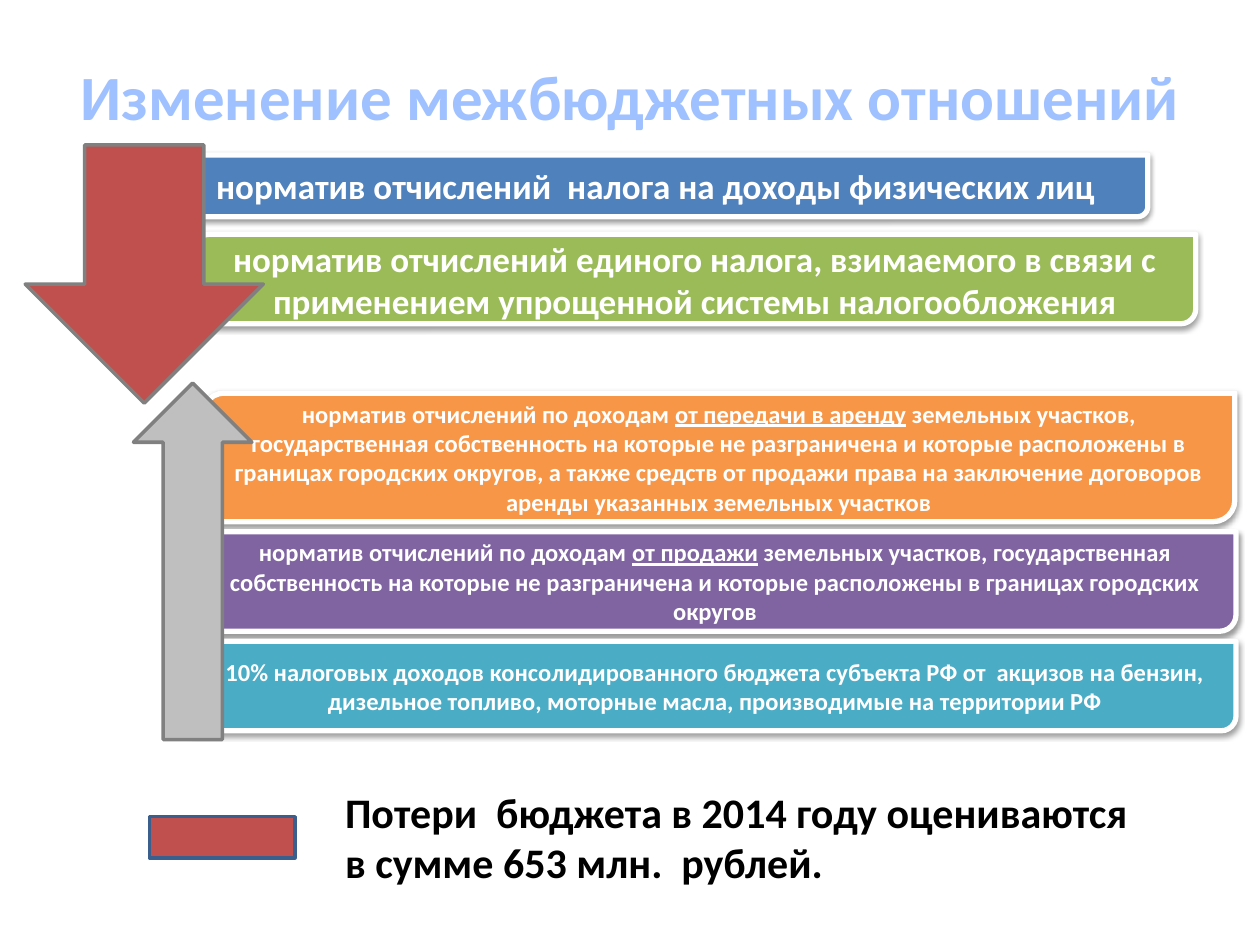
from lxml import etree
from pptx import Presentation
from pptx.dml.color import RGBColor
from pptx.enum.shapes import MSO_SHAPE
from pptx.enum.text import MSO_ANCHOR, PP_ALIGN
from pptx.oxml.ns import qn
from pptx.util import Inches, Pt

BAR = MSO_SHAPE.ROUND_2_DIAG_RECTANGLE
DOWN, UP = MSO_SHAPE.DOWN_ARROW, MSO_SHAPE.UP_ARROW
MINUS = MSO_SHAPE.MATH_MINUS
MID, TOP = MSO_ANCHOR.MIDDLE, MSO_ANCHOR.TOP
MIDST, LEFT = PP_ALIGN.CENTER, PP_ALIGN.LEFT
WIDE, HIGH = Inches(10), Inches(7.5)
COLS, ROWS = 100, 75
RED = "C0504D"


def tint(code):
    return RGBColor.from_string(code)


def write(frame, text, size=14, color="FFFFFF", align=MIDST, anchor=MID, font="Calibri"):
    """Fill a frame with bold text; parts between underscores are underlined."""
    frame.word_wrap = True
    frame.vertical_anchor = anchor
    line = frame.paragraphs[0]
    line.alignment = align
    for index, part in enumerate(text.split("_")):
        run = line.add_run()
        run.text = part
        run.font.name, run.font.size, run.font.bold = font, Pt(size), True
        run.font.underline = index % 2 == 1
        run.font.color.rgb = tint(color)


class Deck:
    """Holds the style and the current slide, placed on a grid of columns and rows."""

    def __init__(self):
        self.file = Presentation()
        self.file.slide_width, self.file.slide_height = WIDE, HIGH
        self.slide = self.file.slides.add_slide(self.file.slide_layouts[6])

    def place(self, left, top, width, height):
        col, row = WIDE / COLS, HIGH / ROWS
        return [int(n) for n in (left * col, top * row, width * col, height * row)]

    def text(self, area, words, **style):
        box = self.slide.shapes.add_textbox(*self.place(*area))
        write(box.text_frame, words, **style)

    def shape(self, kind, area, fill, edge, weight=2):
        item = self.slide.shapes.add_shape(kind, *self.place(*area))
        item.shadow.inherit = False
        item.fill.solid()
        item.fill.fore_color.rgb = tint(fill)
        item.line.color.rgb = tint(edge)
        item.line.width = Pt(weight)
        return item

    def bar(self, area, fill, words, size=14):
        item = self.shape(BAR, area, fill, "FFFFFF", 3)
        self.shade(item)
        write(item.text_frame, words, size=size)

    def shade(self, item):
        group = item._element.spPr.find(qn("a:effectLst"))
        cast = etree.SubElement(group, qn("a:outerShdw"), blurRad=str(Pt(3.1)),
                                dist=str(Pt(1.6)), dir="5400000", rotWithShape="0")
        black = etree.SubElement(cast, qn("a:srgbClr"), val="000000")
        etree.SubElement(black, qn("a:alpha"), val="38000")


def main():
    deck = Deck()
    deck.text((5, 1.3, 90, 12.5), "Изменение межбюджетных отношений", size=36, color="A0C1FF")
    bars = [
        ((13, 12.3, 78.1, 4.9), "4F81BD",
         "норматив отчислений  налога на доходы физических лиц", 20),
        ((15.4, 18.6, 79.5, 7.1), "9BBB59",
         "норматив отчислений единого налога, взимаемого в связи с "
         "применением упрощенной системы налогообложения", 20),
        ((16.1, 31.2, 81.9, 10.2), "F79646",
         "норматив отчислений по доходам _от передачи в аренду_ земельных участков, "
         "государственная собственность на которые не разграничена и которые "
         "расположены в границах городских округов, а также средств от продажи права "
         "на заключение договоров аренды указанных земельных участков", 14),
        ((15.4, 42.2, 82.7, 7.9), "8064A2",
         "норматив отчислений по доходам _от продажи_ земельных участков, "
         "государственная собственность на которые не разграничена и которые "
         "расположены в границах городских округов", 14),
        ((15.4, 50.9, 82.7, 7.1), "4BACC6",
         "10% налоговых доходов консолидированного бюджета субъекта РФ от  акцизов "
         "на бензин, дизельное топливо, моторные масла, производимые на территории РФ", 14),
    ]
    for bar in bars:
        deck.bar(*bar)
    deck.shape(UP, (10.6, 30.4, 9.4, 28.3), "BFBFBF", "808080")
    deck.shape(DOWN, (2, 11.5, 18.9, 20.5), RED, "808080")
    deck.shape(MINUS, (9.8, 59.5, 15.7, 13.9), RED, "3A5F8C")
    deck.text((26.4, 61.9, 66.1, 9.1),
              "Потери  бюджета в 2014 году оцениваются в сумме 653 млн.  рублей.",
              size=24, color="000000", align=LEFT, anchor=TOP)
    deck.file.save("out.pptx")


if __name__ == "__main__":
    main()
